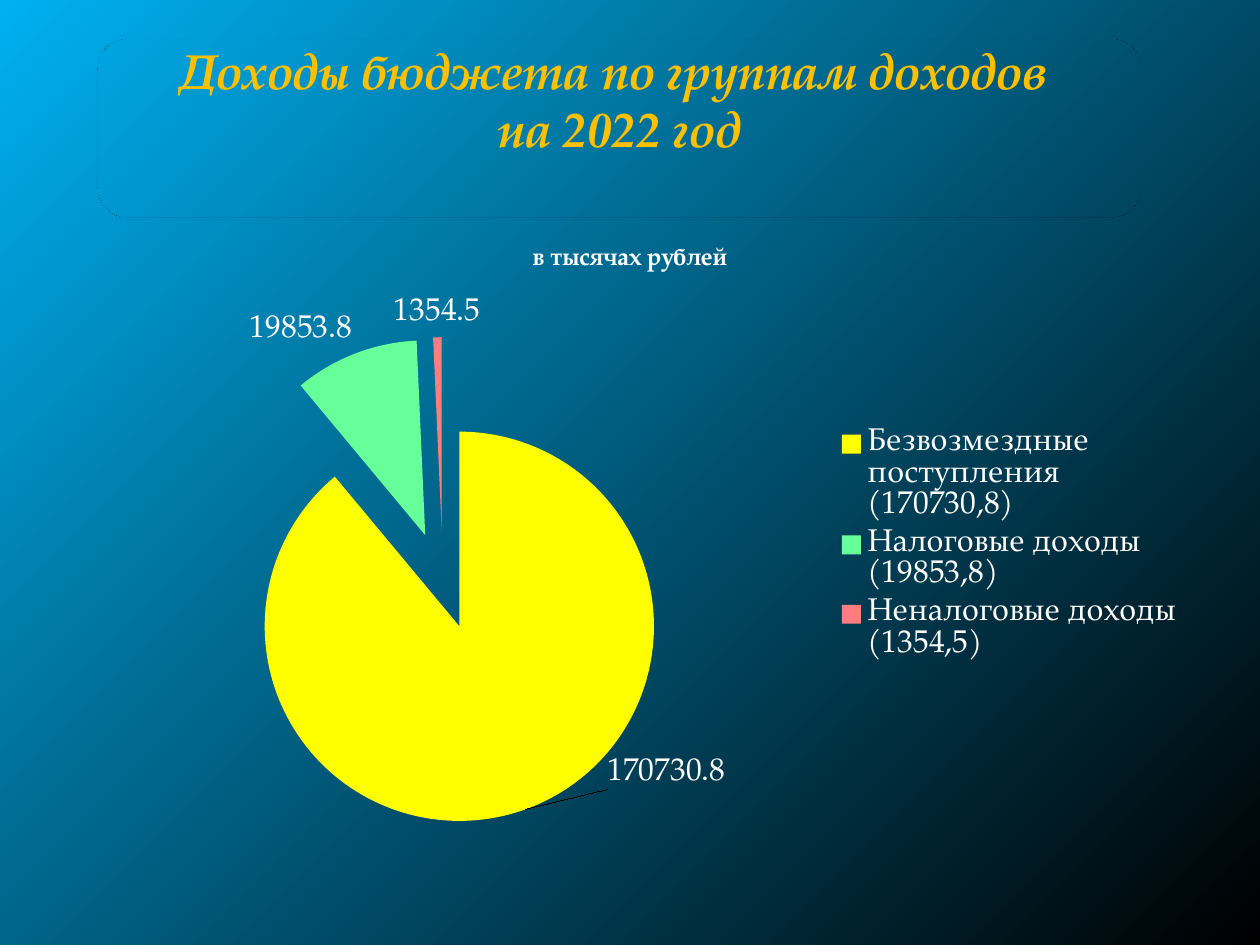
from lxml import etree
from pptx import Presentation
from pptx.chart.data import CategoryChartData
from pptx.dml.color import RGBColor
from pptx.enum.chart import XL_CHART_TYPE, XL_LABEL_POSITION, XL_LEGEND_POSITION
from pptx.enum.shapes import MSO_SHAPE
from pptx.enum.text import MSO_ANCHOR, PP_ALIGN
from pptx.oxml import parse_xml
from pptx.oxml.ns import nsdecls, qn
from pptx.util import Pt

PIE = XL_CHART_TYPE.PIE
OUTSIDE_END = XL_LABEL_POSITION.OUTSIDE_END
LEGEND_RIGHT = XL_LEGEND_POSITION.RIGHT
ROUNDED_RECTANGLE = MSO_SHAPE.ROUNDED_RECTANGLE
MIDDLE = MSO_ANCHOR.MIDDLE
CENTER = PP_ALIGN.CENTER

SKY = RGBColor(0x00, 0xB0, 0xF0)
BLACK = RGBColor(0x00, 0x00, 0x00)
GOLD = RGBColor(0xFF, 0xC0, 0x00)
WHITE = RGBColor(0xFF, 0xFF, 0xFF)
YELLOW = RGBColor(0xFF, 0xFF, 0x00)
GREEN = RGBColor(0x66, 0xFF, 0x99)
PINK = RGBColor(0xFF, 0x7C, 0x80)
FONT = "TeX Gyre Pagella"
UNIT = "в тысячах рублей"


def format_font(font, size, color, **values):
    font.color.rgb = color
    for name, value in {"name": FONT, "size": Pt(size), **values}.items():
        setattr(font, name, value)


def manual_layout(x, y, **values):
    """Return a chart layout element; lengths are fractions of the chart."""
    layout = parse_xml(f"<c:layout {nsdecls('c')}><c:manualLayout/></c:layout>")
    for name, value in {**values, "x": x, "y": y}.items():
        etree.SubElement(layout[0], qn(f"c:{name}")).set("val", str(value))
    return layout


presentation = Presentation()
presentation.slide_width = Pt(720)
presentation.slide_height = Pt(540)
slide = presentation.slides.add_slide(presentation.slide_layouts[6])

# Background gradient from the top left corner
background = slide.background.fill
background.gradient()
for stop, color in zip(background.gradient_stops, (SKY, BLACK)):
    stop.color.rgb = color
gradient = next(slide._element.iter(qn("a:gradFill")))
gradient.replace(gradient.find(qn("a:lin")), parse_xml(
    f'<a:path {nsdecls("a")} path="circle"><a:fillToRect r="100000" b="100000"/></a:path>'))

# Title, on a shape filled with the slide background
title = slide.shapes.add_shape(ROUNDED_RECTANGLE, Pt(56), Pt(22.5), Pt(596), Pt(101.5))
title._element.set("useBgFill", "1")
title.line.fill.background()
title.shadow.inherit = False
frame = title.text_frame
frame.word_wrap = True
frame.vertical_anchor = MIDDLE
frame.margin_bottom = Pt(37)
frame.text = "Доходы бюджета по группам доходов \nна 2022 год"
for paragraph in frame.paragraphs:
    paragraph.alignment = CENTER
    format_font(paragraph.runs[0].font, 28, GOLD, bold=True, italic=True)

# Pie chart of income groups
chart_data = CategoryChartData()
chart_data.categories = [
    "Безвозмездные поступления (170730,8)",
    "Налоговые доходы (19853,8)",
    "Неналоговые доходы (1354,5)",
]
chart_data.add_series(UNIT, (170730.8, 19853.8, 1354.5))
chart = slide.shapes.add_chart(PIE, Pt(36), Pt(126), Pt(648), Pt(370.8), chart_data).chart
format_font(chart.font, 18, WHITE)
chart.has_title = True
chart.chart_title.text_frame.text = UNIT
chart.chart_title.include_in_layout = False
format_font(chart.chart_title.text_frame.paragraphs[0].runs[0].font, 14, WHITE, bold=True)
chart.has_legend = True
chart.legend.position = LEGEND_RIGHT
chart.legend.include_in_layout = False
format_font(chart.legend.font, 18, WHITE)

plot = chart.plots[0]
plot.vary_by_categories = True
plot_area = next(chart._chartSpace.iter(qn("c:plotArea")))
for layout in plot_area.findall(qn("c:layout")):
    plot_area.remove(layout)
plot_area.insert(0, manual_layout(
    0.12, 0.18, layoutTarget="inner", xMode="edge", yMode="edge"))
for name, value in {"w": 0.43, "h": 0.75}.items():
    etree.SubElement(plot_area[0][0], qn(f"c:{name}")).set("val", str(value))

series = plot.series[0]
for index, color in enumerate((YELLOW, GREEN, PINK)):
    point_format = series.points[index].format
    point_format.fill.solid()
    point_format.fill.fore_color.rgb = color
    point_format.line.fill.background()
series._element.find(qn("c:tx")).addnext(
    parse_xml(f'<c:explosion {nsdecls("c")} val="25"/>'))

labels = series.data_labels
labels.show_value = True
labels.position = OUTSIDE_END
format_font(labels.font, 18, WHITE)

# The largest share has its label moved aside, with a leader line
main_label = series.points[0].data_label
main_label.position = OUTSIDE_END
format_font(main_label.font, 18, WHITE)
label_element = next(series._element.iter(qn("c:dLbl")))
label_element.find(qn("c:idx")).addnext(manual_layout(0.07, -0.09))

presentation.save("out.pptx")
